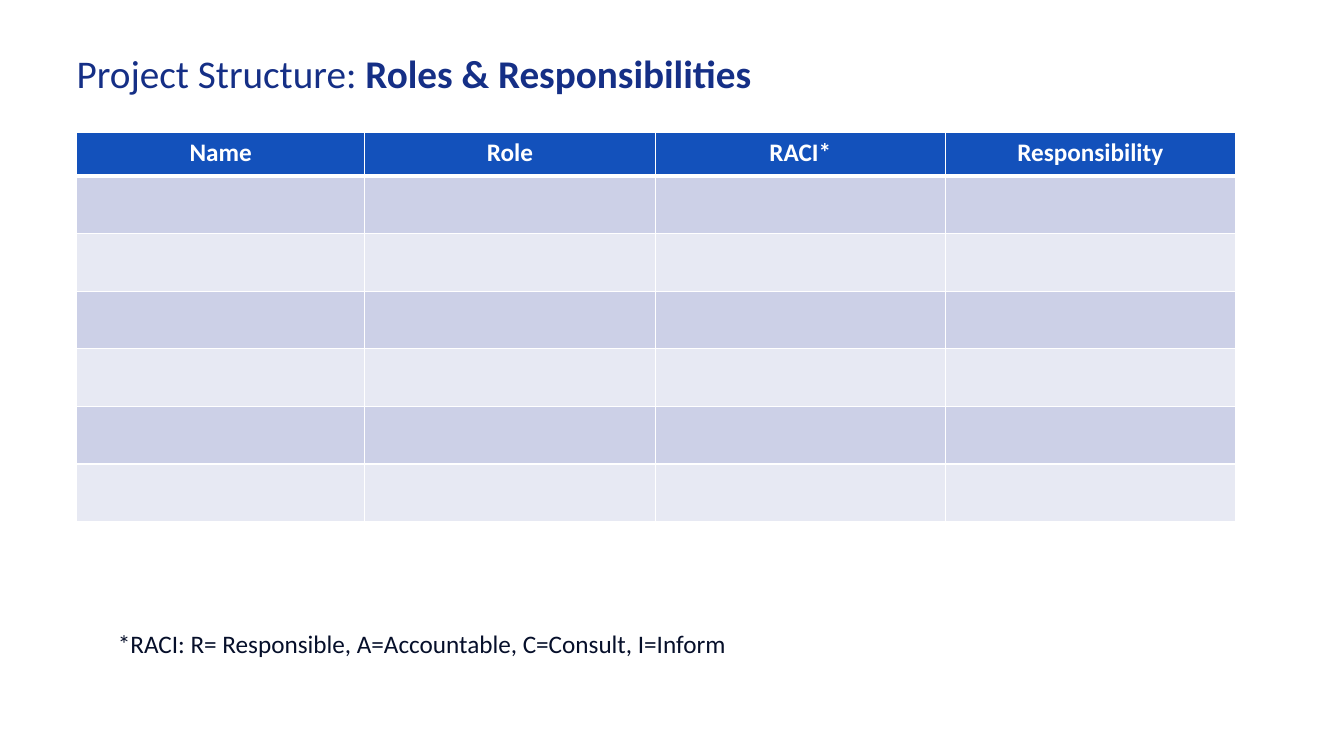
from dataclasses import dataclass

from lxml import etree
from pptx import Presentation
from pptx.dml.color import RGBColor
from pptx.enum.text import MSO_ANCHOR, MSO_AUTO_SIZE, PP_ALIGN
from pptx.oxml.ns import qn
from pptx.util import Cm, Pt

LEFT = PP_ALIGN.LEFT
CENTER = PP_ALIGN.CENTER
MIDDLE = MSO_ANCHOR.MIDDLE
NO_AUTOFIT = MSO_AUTO_SIZE.NONE
FIT_SHAPE = MSO_AUTO_SIZE.SHAPE_TO_FIT_TEXT
TITLE_ONLY_LAYOUT = 5


@dataclass(frozen=True)
class Theme:
    font: str = "Calibri"
    title_size: int = 28
    text_size: int = 18
    title: str = "152F86"
    text: str = "060F2A"
    header: str = "1351BB"
    white: str = "FFFFFF"
    bands: tuple = ("CCD0E7", "E7E9F3")


THEME = Theme()
HEADERS = ("Name", "Role", "RACI*", "Responsibility")
COLUMN_WIDTHS = (7.26, 7.32, 7.32, 7.3)
HEADER_HEIGHT = 1.11
BODY_HEIGHT = 1.45
BODY_ROWS = 6


def add_run(paragraph, text, size, color, bold=False):
    run = paragraph.add_run()
    run.text = text
    run.font.name = THEME.font
    run.font.size = Pt(size)
    run.font.bold = bold
    run.font.color.rgb = RGBColor.from_string(color)


def add_title(slide, lead, emphasis):
    title = slide.shapes.title
    title.left, title.top, title.width, title.height = Cm(1.68), Cm(0.08), Cm(29.21), Cm(3.68)
    frame = title.text_frame
    frame.auto_size = NO_AUTOFIT
    frame.word_wrap = True
    frame.vertical_anchor = MIDDLE
    paragraph = frame.paragraphs[0]
    paragraph.alignment = LEFT
    paragraph.line_spacing = 0.9
    add_run(paragraph, lead, THEME.title_size, THEME.title)
    add_run(paragraph, emphasis, THEME.title_size, THEME.title, bold=True)


def set_borders(cell, widths):
    properties = cell._tc.get_or_add_tcPr()
    for side, width in widths.items():
        line = etree.SubElement(properties, qn(f"a:ln{side}"), w=str(Pt(width)))
        fill = etree.SubElement(line, qn("a:solidFill"))
        etree.SubElement(fill, qn("a:srgbClr"), val=THEME.white)


def style_cell(cell, color, top=1, bottom=1):
    set_borders(cell, {"L": 1, "R": 1, "T": top, "B": bottom})
    cell.fill.solid()
    cell.fill.fore_color.rgb = RGBColor.from_string(color)


def add_roles_table(slide):
    height = HEADER_HEIGHT + BODY_ROWS * BODY_HEIGHT
    frame = slide.shapes.add_table(
        BODY_ROWS + 1, len(HEADERS), Cm(1.93), Cm(3.33), Cm(sum(COLUMN_WIDTHS)), Cm(height)
    )
    table = frame.table
    table.horz_banding = False
    for column, width in zip(table.columns, COLUMN_WIDTHS):
        column.width = Cm(width)
    for index, row in enumerate(table.rows):
        row.height = Cm(BODY_HEIGHT if index else HEADER_HEIGHT)
        for cell, header in zip(row.cells, HEADERS):
            if index:
                style_cell(cell, THEME.bands[(index - 1) % 2], top=3 if index == 1 else 1)
            else:
                style_cell(cell, THEME.header, bottom=3)
                paragraph = cell.text_frame.paragraphs[0]
                paragraph.alignment = CENTER
                add_run(paragraph, header, THEME.text_size, THEME.white, bold=True)


def add_footnote(slide, text):
    box = slide.shapes.add_textbox(Cm(2.72), Cm(15.7), Cm(16.03), Cm(1.03))
    box.text_frame.word_wrap = False
    box.text_frame.auto_size = FIT_SHAPE
    add_run(box.text_frame.paragraphs[0], text, THEME.text_size, THEME.text)


def main():
    presentation = Presentation()
    presentation.slide_width = Cm(33.87)
    presentation.slide_height = Cm(19.05)
    slide = presentation.slides.add_slide(presentation.slide_layouts[TITLE_ONLY_LAYOUT])
    add_title(slide, "Project Structure: ", "Roles & Responsibilities")
    add_roles_table(slide)
    add_footnote(slide, "*RACI: R= Responsible, A=Accountable, C=Consult, I=Inform")
    presentation.save("out.pptx")


if __name__ == "__main__":
    main()
